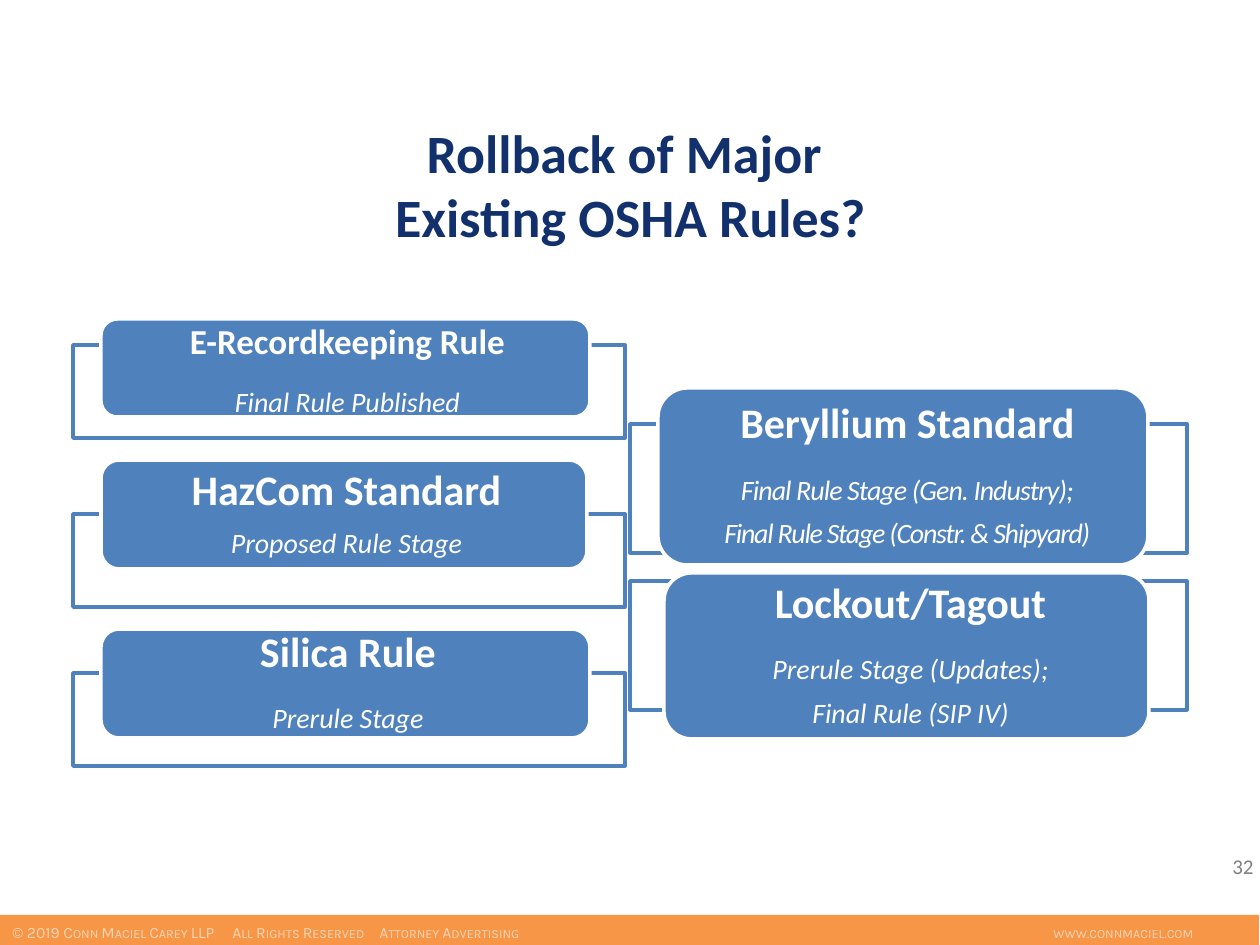
from lxml import etree
from pptx import Presentation
from pptx import util as u
from pptx.dml.color import RGBColor
from pptx.enum import shapes, text
from pptx.oxml.ns import qn

BLUE = RGBColor(0x4F, 0x81, 0xBD)
NAVY = RGBColor(0x11, 0x30, 0x6C)
ORANGE = RGBColor(0xF7, 0x96, 0x46)
PEACH = RGBColor(0xFC, 0xD5, 0xB5)
GREY = RGBColor(0x80, 0x80, 0x80)
WHITE = RGBColor(0xFF, 0xFF, 0xFF)


def px(*lengths):
    return [u.Emu(round(length * 914400 / 126)) for length in lengths]


def add_box(kind, place, fill, line=None):
    box = page.shapes.add_shape(kind, *px(*place))
    box.shadow.inherit = False
    box.fill.solid()
    box.fill.fore_color.rgb = fill
    if line is None:
        box.line.fill.background()
    else:
        box.line.color.rgb = line
        box.line.width = u.Pt(2)
    return box


deck = Presentation()
deck.slide_width, deck.slide_height = px(1260, 945)
page = deck.slides.add_slide(deck.slide_layouts[5])

# Title
title = page.shapes.title
title.left, title.top, title.width, title.height = px(95, 116, 1071, 136)
title.text_frame.text = "Rollback of Major \vExisting OSHA Rules?"
title.text_frame.auto_size = text.MSO_AUTO_SIZE.NONE
title.text_frame.vertical_anchor = text.MSO_ANCHOR.MIDDLE
para = title.text_frame.paragraphs[0]
para.alignment = text.PP_ALIGN.CENTER
para.font.name, para.font.size, para.font.bold = "Calibri", u.Pt(30.8), True
para.font.color.rgb = NAVY

# Rules: frame top, card place, side and upper insets, heading, size, spacing,
# stage lines with their character spacing in hundredths of a point
LEFT_FRAME, RIGHT_FRAME = (73, 552, 93), (630, 557, 129)
rules = [
    (LEFT_FRAME, 345, (101, 319, 489, 98), (19, 5), "E-Recordkeeping Rule", 20, u.Pt(25),
     [("Final Rule Published", 0)]),
    (LEFT_FRAME, 514, (101, 460, 486, 109), (20, 5), "HazCom Standard", 24, 0.9,
     [("Proposed Rule Stage", 0)]),
    (LEFT_FRAME, 673, (101, 629, 489, 109), (20, 5), "Silica Rule", 24, u.Pt(25),
     [("Prerule Stage", 0)]),
    (RIGHT_FRAME, 424, (658, 388, 490, 177), (24, 9), "Beryllium Standard", 24, u.Pt(25),
     [("Final Rule Stage (Gen. Industry);", -50),
      ("Final Rule Stage (Constr. & Shipyard)", -70)]),
    (RIGHT_FRAME, 581, (664, 573, 485, 166), (23, 8), "Lockout/Tagout", 24, u.Pt(25),
     [("Prerule Stage (Updates);", 0), ("Final Rule (SIP IV)", 0)]),
]
for (left, width, height), top, place, (side, edge), heading, size, spacing, stages in rules:
    frame = add_box(shapes.MSO_SHAPE.RECTANGLE, (left, top, width, height), WHITE, BLUE)
    tint = frame.fill._xPr.find(qn("a:solidFill"))[0]
    etree.SubElement(tint, qn("a:alpha"), val="90000")

    card = add_box(shapes.MSO_SHAPE.ROUNDED_RECTANGLE, place, BLUE, WHITE)
    body = card.text_frame
    body.word_wrap = True
    body.vertical_anchor = text.MSO_ANCHOR.MIDDLE
    body.margin_left, body.margin_right = px(side, 15)
    body.margin_top, body.margin_bottom = px(edge, edge)

    name = body.paragraphs[0]
    name.text = heading
    name.font.size, name.font.bold = u.Pt(size), True
    name.space_after = u.Pt(size * 0.35)
    status = body.add_paragraph()
    for number, (words, tracking) in enumerate(stages):
        if number:
            status.add_line_break()
        span = status.add_run()
        span.text = words
        if tracking:
            span.font._element.set("spc", str(tracking))
    status.font.size, status.font.italic = u.Pt(16), True
    status.space_after = u.Pt(5.6)
    for para in (name, status):
        para.alignment = text.PP_ALIGN.CENTER
        para.line_spacing = spacing
        para.font.name = "Calibri"
        para.font.color.rgb = WHITE

# Page number
number_box = page.shapes.add_textbox(*px(973, 841, 293, 50))
number_box.text_frame.word_wrap = True
number_box.text_frame.vertical_anchor = text.MSO_ANCHOR.MIDDLE
para = number_box.text_frame.paragraphs[0]
para.text = "32"
para.alignment = text.PP_ALIGN.RIGHT
para.font.name, para.font.size = "Calibri", u.Pt(12)
para.font.color.rgb = GREY

# Footer band with tab stops between its parts
footer = add_box(shapes.MSO_SHAPE.RECTANGLE, (0, 915, 1259, 33), ORANGE)
footer.text_frame.word_wrap = True
footer.text_frame.vertical_anchor = text.MSO_ANCHOR.TOP
para = footer.text_frame.paragraphs[0]
para.alignment = text.PP_ALIGN.LEFT
para.line_spacing = u.Pt(12)
tabs = etree.SubElement(para._p.get_or_add_pPr(), qn("a:tabLst"))
for stop in px(220, 367, 1041):
    etree.SubElement(tabs, qn("a:tab"), pos=str(stop), algn="l")
para.add_run().text = "© 2019 "
span = para.add_run()
span.text = "Conn Maciel Carey LLP\tAll Rights Reserved\tAttorney Advertising\twww.connmaciel.com"
span.font._element.set("cap", "small")
para.font.name, para.font.size = "Karla", u.Pt(9)
para.font.color.rgb = PEACH

deck.save("out.pptx")
